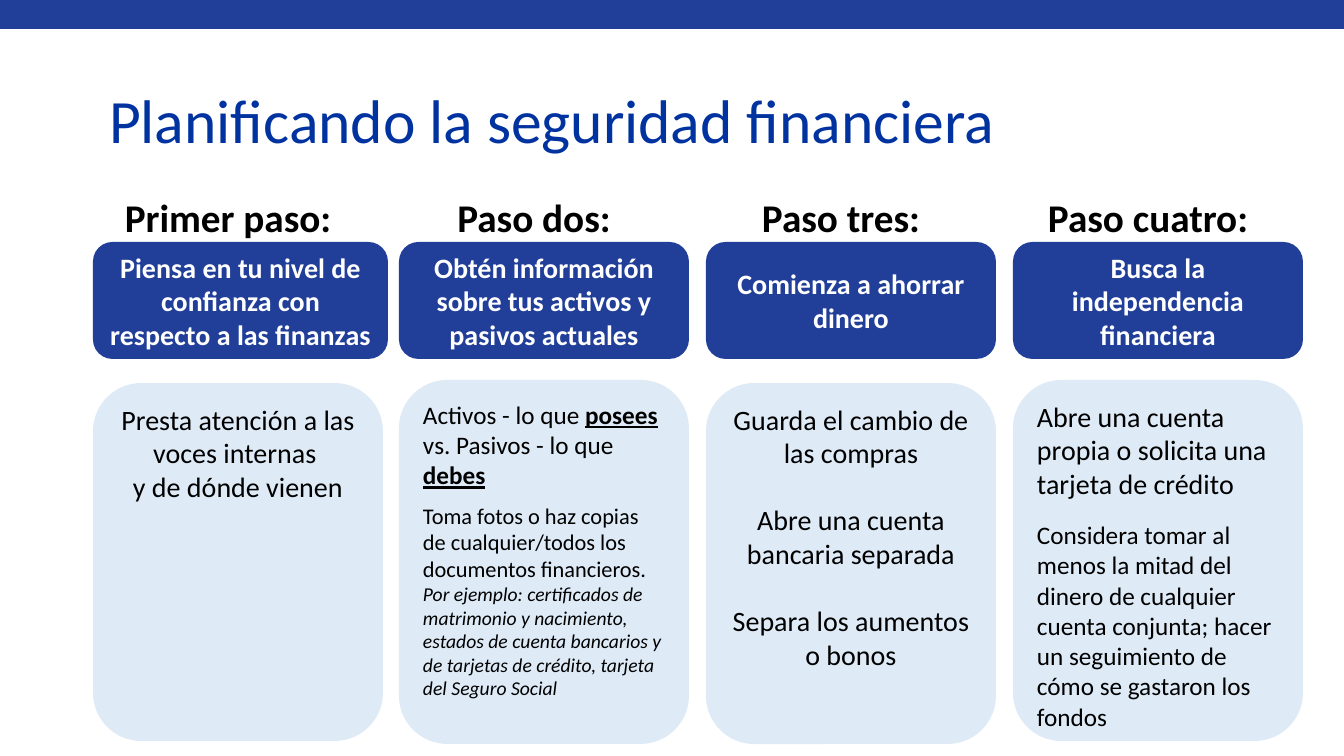
from pptx import Presentation
from pptx.dml.color import RGBColor
from pptx.enum.shapes import MSO_SHAPE
from pptx.enum.text import MSO_ANCHOR, MSO_AUTO_SIZE, PP_ALIGN
from pptx.util import Pt

TITLE = "Planificando la seguridad financiera"
FONT = "Calibri"
COLORS = {"band": "213F98", "title": "0033A0", "card": "DEEBF7", "text": "000000", "white": "FFFFFF"}

STEPS = [
    {
        "label": "Primer paso: ",
        "goal": "Piensa en tu nivel de confianza con respecto a las finanzas",
        "goal_width": 295, "top": 383, "height": 358, "align": PP_ALIGN.CENTER, "gap": 0,
        "advice": [
            [("Presta atención a las voces internas ", 20, "")],
            [("y de dónde vienen", 20, "")],
        ],
    },
    {
        "label": "Paso dos: ",
        "goal": "Obtén información sobre tus activos y pasivos actuales",
        "goal_width": 290, "top": 380, "height": 364, "align": PP_ALIGN.LEFT, "gap": 8.5,
        "advice": [
            [
                ("Activos - lo que ", 18, ""),
                ("posees ", 18, "bu"),
                ("vs. Pasivos - lo que ", 18, ""),
                ("debes", 18, "bu"),
            ],
            [
                ("Toma fotos o haz copias de cualquier/todos los documentos financieros. ", 16, ""),
                ("Por ejemplo: certificados de matrimonio y nacimiento, estados de cuenta "
                 "bancarios y de tarjetas de crédito, tarjeta del Seguro Social", 14, "i"),
            ],
        ],
    },
    {
        "label": "Paso tres: ",
        "goal": "Comienza a ahorrar dinero",
        "goal_width": 290, "top": 383, "height": 361, "align": PP_ALIGN.CENTER, "gap": 24,
        "advice": [
            [("Guarda el cambio de las compras", 20, "")],
            [("Abre una cuenta bancaria separada", 20, "")],
            [("Separa los aumentos o bonos", 20, "")],
        ],
    },
    {
        "label": "Paso cuatro: ",
        "goal": "Busca la independencia financiera",
        "goal_width": 290, "top": 380, "height": 361, "align": PP_ALIGN.LEFT, "gap": 14,
        "advice": [
            [("Abre una cuenta propia o solicita una tarjeta de crédito", 20, "")],
            [("Considera tomar al menos la mitad del dinero de cualquier cuenta conjunta; "
              "hacer un seguimiento de cómo se gastaron los fondos", 18, "")],
        ],
    },
]

SLIDE_WIDTH, SLIDE_HEIGHT = 1344, 756
FIRST_LEFT, LAST_LEFT = 93, 1013
LABEL_TOP, LABEL_WIDTH, LABEL_HEIGHT = 188, 279, 57
GOAL_TOP, GOAL_HEIGHT = 242, 117
CARD_WIDTH = 290


def px(length):
    return round(length * 914400 / 100.8)


def box(*lengths):
    return [px(length) for length in lengths]


def write(frame, paragraphs, color, align, anchor=MSO_ANCHOR.TOP, gap=0):
    frame.word_wrap = True
    frame.auto_size = MSO_AUTO_SIZE.NONE
    frame.vertical_anchor = anchor
    for index, pieces in enumerate(paragraphs):
        paragraph = frame.add_paragraph() if index else frame.paragraphs[0]
        paragraph.alignment = align
        paragraph.space_before = Pt(gap if index else 0)
        for words, size, style in pieces:
            run = paragraph.add_run()
            run.text = words
            run.font.name = FONT
            run.font.size = Pt(size)
            run.font.bold = "b" in style
            run.font.italic = "i" in style
            run.font.underline = "u" in style
            run.font.color.rgb = RGBColor.from_string(COLORS[color])


def add_panel(shapes, kind, bounds, color):
    panel = shapes.add_shape(kind, *box(*bounds))
    panel.shadow.inherit = False
    panel.fill.solid()
    panel.fill.fore_color.rgb = RGBColor.from_string(COLORS[color])
    panel.line.fill.background()
    return panel


def add_step(slide, left, step):
    heading = slide.shapes.add_group_shape().shapes
    goal = add_panel(heading, MSO_SHAPE.ROUNDED_RECTANGLE,
                     (left, GOAL_TOP, step["goal_width"], GOAL_HEIGHT), "band")
    write(goal.text_frame, [[(step["goal"], 20, "b")]], "white", PP_ALIGN.CENTER, MSO_ANCHOR.MIDDLE)
    label = heading.add_textbox(*box(left, LABEL_TOP, LABEL_WIDTH, LABEL_HEIGHT))
    write(label.text_frame, [[(step["label"], 28, "b")]], "text", PP_ALIGN.CENTER)
    card = add_panel(slide.shapes, MSO_SHAPE.ROUNDED_RECTANGLE,
                     (left, step["top"], CARD_WIDTH, step["height"]), "card")
    write(card.text_frame, step["advice"], "text", step["align"], gap=step["gap"])


def main():
    deck = Presentation()
    deck.slide_width, deck.slide_height = box(SLIDE_WIDTH, SLIDE_HEIGHT)
    slide = deck.slides.add_slide(deck.slide_layouts[5])
    add_panel(slide.shapes, MSO_SHAPE.RECTANGLE, (0, 0, SLIDE_WIDTH, 29), "band")

    title = slide.shapes.title
    title.left, title.top, title.width, title.height = box(99, 76, 1159, 96)
    write(title.text_frame, [[(TITLE, 44, "")]], "title", PP_ALIGN.LEFT, MSO_ANCHOR.MIDDLE)
    title.text_frame.paragraphs[0].line_spacing = 0.9

    for index, step in enumerate(STEPS):
        left = FIRST_LEFT + index * (LAST_LEFT - FIRST_LEFT) // (len(STEPS) - 1)
        add_step(slide, left, step)

    deck.save("out.pptx")


if __name__ == "__main__":
    main()
